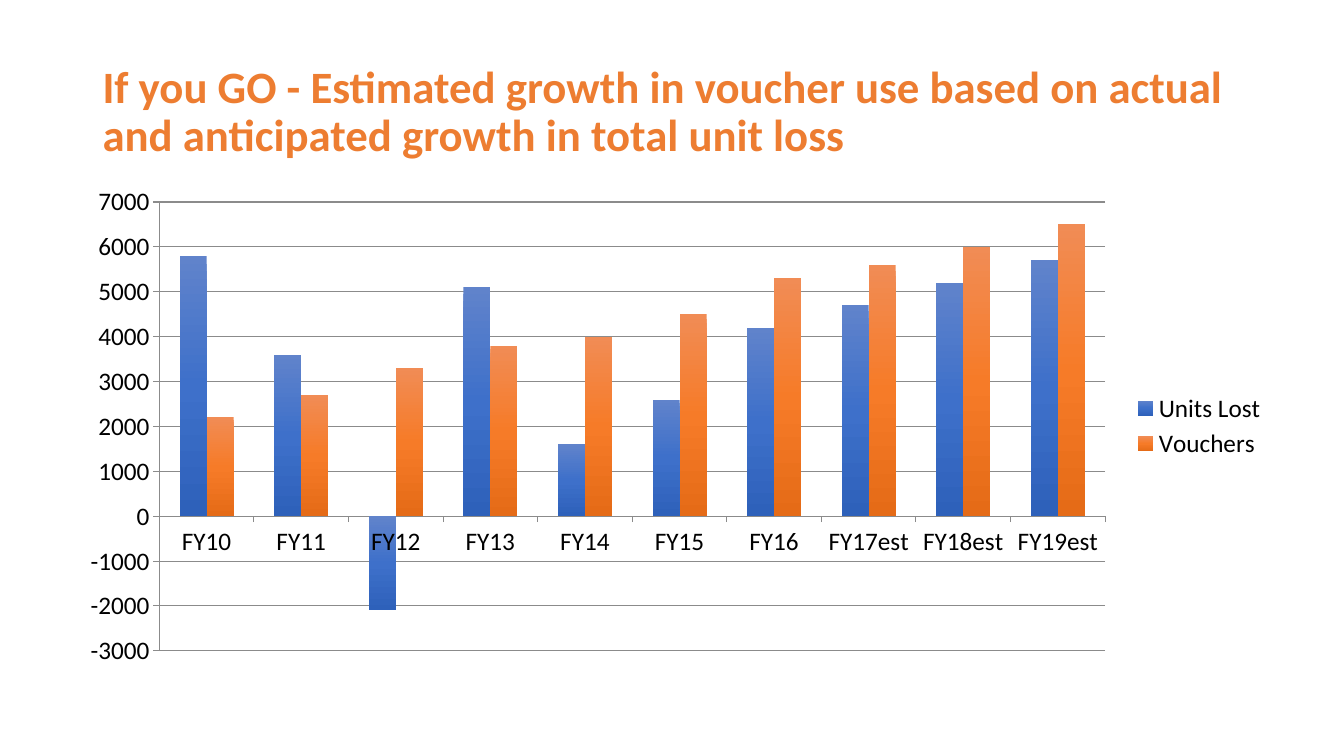
from copy import deepcopy
from dataclasses import dataclass

from lxml.etree import SubElement
from pptx import Presentation
from pptx.chart.data import CategoryChartData
from pptx.dml.color import RGBColor
from pptx.enum.chart import XL_CHART_TYPE, XL_LEGEND_POSITION, XL_TICK_MARK
from pptx.enum.text import MSO_ANCHOR, PP_ALIGN
from pptx.oxml.ns import qn
from pptx.util import Cm, Pt


@dataclass(frozen=True)
class Theme:
    """Colours and type sizes of the slide."""
    face: str = "Calibri"
    head: str = "ED7D31"
    ink: str = "000000"
    line: str = "8B8B8B"
    lost: tuple = ("6083CB", "3E70CA", "2E61BA")
    used: tuple = ("F18C55", "F67B28", "E56B17")
    big: int = 32
    base: int = 18


THEME = Theme()
TITLE = ("If you GO - Estimated growth in voucher use based on actual "
         "and anticipated growth in total unit loss")
YEARS = [f"FY{year}" + ("est" if year > 16 else "") for year in range(10, 20)]
DATA = {
    "Units Lost": (5800, 3600, -2100, 5100, 1600, 2600, 4200, 4700, 5200, 5700),
    "Vouchers": (2200, 2700, 3300, 3800, 4000, 4500, 5300, 5600, 6000, 6500),
}
PLOT = {"x": 0.076, "y": 0.051, "w": 0.782, "h": 0.9}


def apply(item, form):
    """Set each attribute of an item from a dict of format values."""
    for name, value in form.items():
        setattr(item, name, value)


def style(font, size, color, bold=False):
    """Give a font its face, size, weight and colour."""
    apply(font, {"name": THEME.face, "size": Pt(size), "bold": bold})
    font.color.rgb = RGBColor.from_string(color)


def rule(line):
    """Draw a thin grey chart line."""
    line.color.rgb = RGBColor.from_string(THEME.line)
    line.width = Pt(0.75)


def shade(fill, stops, colors):
    """Fill from top to bottom through three colours."""
    fill.gradient()
    fill.gradient_angle = 270
    stops = stops()
    stops.insert(1, deepcopy(stops[0]))
    for stop, color, place in zip(fill.gradient_stops, colors, (0, 0.5, 1)):
        stop.color.rgb = RGBColor.from_string(color)
        stop.color.brightness = 0
        stop.position = place


def place(chart):
    """Fix the inner plot area within the chart."""
    plot = chart._chartSpace.chart.plotArea
    for old in plot.findall(qn("c:layout")):
        plot.remove(old)
    layout = SubElement(plot, qn("c:layout"))
    plot.insert(0, layout)
    manual = SubElement(layout, qn("c:manualLayout"))
    parts = {"layoutTarget": "inner", "xMode": "edge", "yMode": "edge", **PLOT}
    for name, value in parts.items():
        SubElement(manual, qn(f"c:{name}")).set("val", str(value))


def add_title(slide):
    """Move, fill and format the title placeholder."""
    title = slide.shapes.title
    apply(title, {"left": Cm(2.33), "top": Cm(1.01),
                  "width": Cm(29.21), "height": Cm(3.68)})
    frame = title.text_frame
    apply(frame, {"text": TITLE, "word_wrap": True,
                  "vertical_anchor": MSO_ANCHOR.MIDDLE})
    para = frame.paragraphs[0]
    apply(para, {"alignment": PP_ALIGN.LEFT, "line_spacing": 0.9})
    style(para.runs[0].font, THEME.big, THEME.head, True)


def add_bars(slide):
    """Add the column chart of lost units and vouchers."""
    data = CategoryChartData()
    data.categories = YEARS
    for name, values in DATA.items():
        data.add_series(name, values)
    chart = slide.shapes.add_chart(
        XL_CHART_TYPE.COLUMN_CLUSTERED, Cm(1.7), Cm(4.45),
        Cm(30.48), Cm(12.57), data).chart
    style(chart.font, THEME.base, THEME.ink)
    apply(chart, {"has_title": False, "has_legend": True})
    apply(chart.legend, {"position": XL_LEGEND_POSITION.RIGHT,
                         "include_in_layout": False})
    apply(chart.plots[0], {"gap_width": 150, "overlap": 0,
                           "vary_by_categories": False})
    for axis in (chart.category_axis, chart.value_axis):
        axis.major_tick_mark = XL_TICK_MARK.OUTSIDE
        rule(axis.format.line)
    apply(chart.value_axis, {"minimum_scale": -3000, "maximum_scale": 7000,
                             "major_unit": 1000, "has_major_gridlines": True})
    rule(chart.value_axis.major_gridlines.format.line)
    for bars, colors in zip(chart.plots[0].series, (THEME.lost, THEME.used)):
        bars.invert_if_negative = False
        shade(bars.format.fill,
              lambda: next(bars._element.iter(qn("a:gsLst"))), colors)
    place(chart)


def main():
    """Build and save the slide."""
    deck = Presentation()
    apply(deck, {"slide_width": Cm(33.87), "slide_height": Cm(19.05)})
    slide = deck.slides.add_slide(deck.slide_layouts[5])
    add_title(slide)
    add_bars(slide)
    deck.save("out.pptx")


if __name__ == "__main__":
    main()
